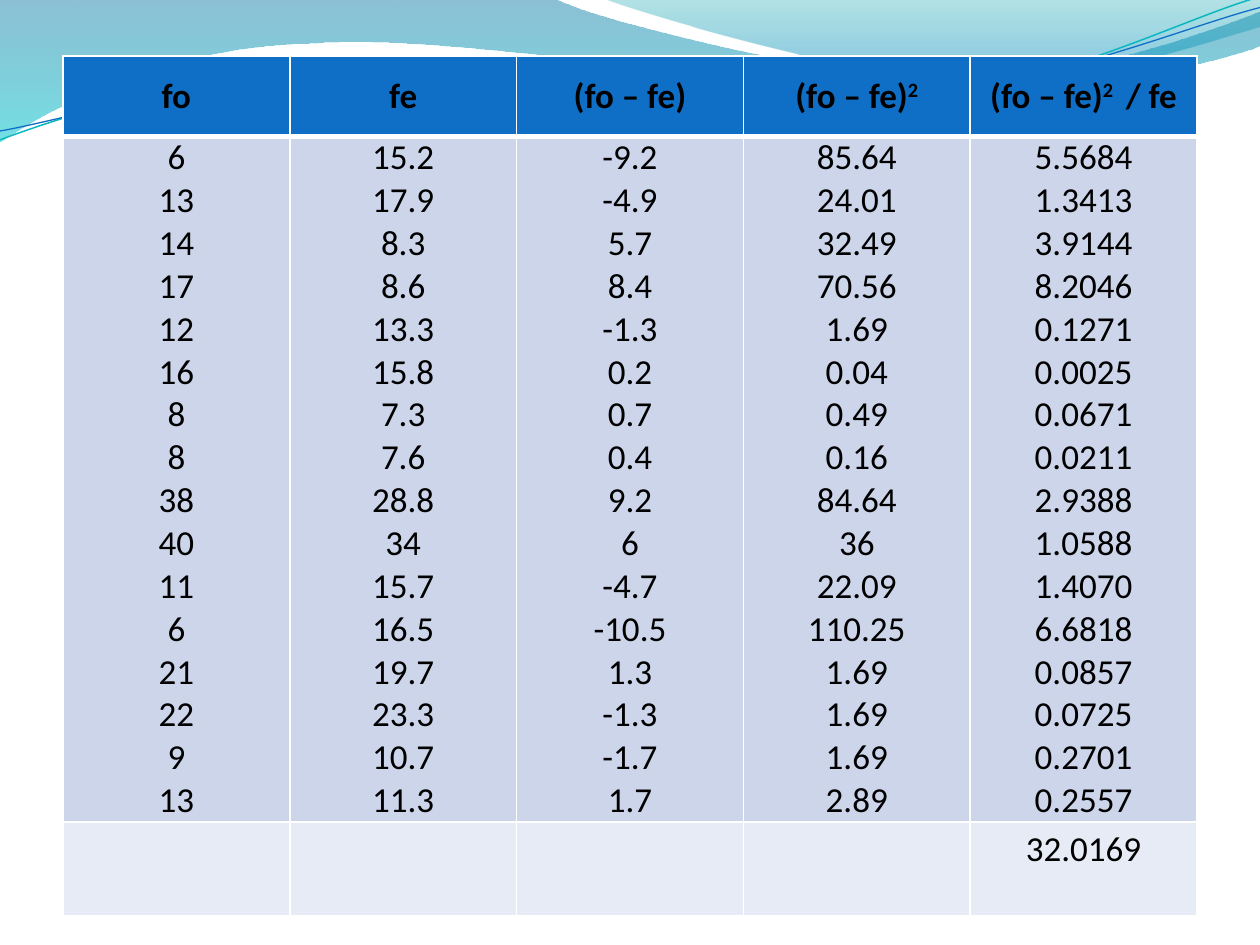
import math

from lxml import etree
from pptx import Presentation
from pptx.dml.color import RGBColor
from pptx.enum.text import MSO_ANCHOR, PP_ALIGN
from pptx.oxml.ns import qn
from pptx.util import Cm, Pt

CENTER = PP_ALIGN.CENTER
MIDDLE, TOP = MSO_ANCHOR.MIDDLE, MSO_ANCHOR.TOP
INCH = 2.54
TILT = 357.3
FONT = "Calibri"
COLORS = {
    "text": "000000", "border": "FFFFFF", "header": "0F6FC6",
    "body": "CCD5EA", "total": "E7EBF5",
    "deep_blue": "0074A1", "cyan": "00C6CF", "teal": "00A1A9", "sky": "008BBF",
    "teal_line": "0AB8BF", "blue_line": "0F6FC6",
}

LEFT_WAVE = [
    [(0, 0)], [(4.4, -0.01)],
    [(4.76, 0.17), (6.64, 0.63), (7.58, 0.63)],
    [(8.53, 0.63), (9.58, 0.26), (10, 0.09)],
    [(10.01, 0.36)],
    [(9.83, 0.44), (8.7, 0.76), (7.46, 0.75)],
    [(6.22, 0.75), (3.82, 0.28), (2.57, 0.34)],
    [(1.29, 0.36), (0.46, 0.83), (-0.01, 1.13)],
    [(0, 0)],
]
RIGHT_WAVE = [
    [(4.79, -0.01)],
    [(5.09, 0.11), (6.82, 0.62), (7.69, 0.65)],
    [(8.56, 0.69), (9.61, 0.32), (10, 0.21)],
    [(10, 0)], [(4.79, -0.01)],
]
TEAL_CURVE = [
    [(0, 1.11)],
    [(0.48, 0.93), (1.58, 0.57), (2.77, 0.52)],
    [(3.95, 0.47), (5.93, 0.89), (7.13, 0.8)],
    [(8.33, 0.71), (9.38, 0.15), (9.98, -0.02)],
]
BLUE_CURVE = [
    [(0, 1.04)],
    [(0.47, 0.96), (1.64, 0.61), (2.83, 0.56)],
    [(4.03, 0.51), (5.97, 0.84), (7.17, 0.75)],
    [(8.36, 0.67), (9.41, 0.21), (10, 0.06)],
]

DIFFERENCE = ("(fo – fe)", False)
HEADERS = [
    [("fo", False)],
    [("fe", False)],
    [DIFFERENCE],
    [DIFFERENCE, ("2", True)],
    [DIFFERENCE, ("2 ", True), (" / fe", False)],
]
OBSERVATIONS = [
    ("6", "15.2", "-9.2", "85.64", "5.5684"),
    ("13", "17.9", "-4.9", "24.01", "1.3413"),
    ("14", "8.3", "5.7", "32.49", "3.9144"),
    ("17", "8.6", "8.4", "70.56", "8.2046"),
    ("12", "13.3", "-1.3", "1.69", "0.1271"),
    ("16", "15.8", "0.2", "0.04", "0.0025"),
    ("8", "7.3", "0.7", "0.49", "0.0671"),
    ("8", "7.6", "0.4", "0.16", "0.0211"),
    ("38", "28.8", "9.2", "84.64", "2.9388"),
    ("40", "34", "6", "36", "1.0588"),
    ("11", "15.7", "-4.7", "22.09", "1.4070"),
    ("6", "16.5", "-10.5", "110.25", "6.6818"),
    ("21", "19.7", "1.3", "1.69", "0.0857"),
    ("22", "23.3", "-1.3", "1.69", "0.0725"),
    ("9", "10.7", "-1.7", "1.69", "0.2701"),
    ("13", "11.3", "1.7", "2.89", "0.2557"),
]
TOTAL = "32.0169"


def color(name):
    """Return the named palette color."""
    return RGBColor.from_string(COLORS[name])


def level(segments, center):
    """Turn segments about a center so that the tilt brings them back."""
    angle = math.radians(360 - TILT)
    cos, sin = math.cos(angle), math.sin(angle)
    cx, cy = center
    return [[(cx + (x - cx) * cos - (y - cy) * sin, cy + (x - cx) * sin + (y - cy) * cos)
             for x, y in segment] for segment in segments]


def add_outline(slide, segments, close):
    """Add a shadowless freeform of lines and cubic curves given in inches."""
    segments = [[(Cm(x * INCH), Cm(y * INCH)) for x, y in segment] for segment in segments]
    ends = [segment[-1] for segment in segments]
    builder = slide.shapes.build_freeform(*ends[0])
    builder.add_line_segments(ends[1:], close=close)
    shape = builder.convert_to_shape()
    shape.shadow.inherit = False
    lines = list(shape._element.spPr.iter(qn("a:lnTo")))
    for line, segment in zip(lines, segments[1:]):
        if len(segment) == 3:
            line.tag = qn("a:cubicBezTo")
            controls = [etree.Element(qn("a:pt"), x=str(x - shape.left), y=str(y - shape.top))
                        for x, y in segment[:2]]
            line[:0] = controls
    return shape


def add_wave(slide, segments, stops):
    """Add a wave with a translucent gradient running from top to bottom."""
    wave = add_outline(slide, segments, True)
    wave.line.fill.background()
    wave.fill.gradient()
    wave.fill.gradient_angle = 270
    for stop, (position, name, _) in zip(wave.fill.gradient_stops, stops):
        stop.position = position
        stop.color.rgb = color(name)
    tints = wave._element.spPr.iter(qn("a:srgbClr"))
    for tint, (_, _, opacity) in zip(tints, stops):
        etree.SubElement(tint, qn("a:alpha")).set("val", str(opacity * 1000))


def add_curve(slide, segments, center, name, width):
    """Add an unfilled, tilted curved line."""
    curve = add_outline(slide, level(segments, center), False)
    curve.rotation = TILT
    curve.fill.background()
    curve.line.color.rgb = color(name)
    curve.line.width = Pt(width)


def set_borders(cell, top, bottom):
    """Draw the four cell borders, with the top and bottom widths in points."""
    properties = cell._tc.get_or_add_tcPr()
    for side, width in (("L", 1), ("R", 1), ("T", top), ("B", bottom)):
        line = etree.SubElement(properties, qn(f"a:ln{side}"), w=str(Pt(width)))
        fill = etree.SubElement(line, qn("a:solidFill"))
        etree.SubElement(fill, qn("a:srgbClr"), val=COLORS["border"])


def style_cell(cell, fill, top=1, bottom=1):
    """Give a cell its borders and fill."""
    set_borders(cell, top, bottom)
    cell.fill.solid()
    cell.fill.fore_color.rgb = color(fill)


def write_cell(cell, lines, bold=False, anchor=TOP):
    """Write centred paragraphs, each a list of (text, superscript) runs."""
    cell.vertical_anchor = anchor
    for index, spans in enumerate(lines):
        frame = cell.text_frame
        para = frame.add_paragraph() if index else frame.paragraphs[0]
        para.alignment = CENTER
        for text, superscript in spans:
            span = para.add_run()
            span.text = text
            span.font.name = FONT
            span.font.size = Pt(20)
            span.font.bold = bold
            span.font.color.rgb = color("text")
            if superscript:
                span.font._element.set("baseline", "30000")


def trim_margins(cell):
    """Tighten the cell margins."""
    cell.margin_left = cell.margin_right = Cm(0.18)
    cell.margin_top = cell.margin_bottom = 0


def add_frequency_table(slide):
    """Add the table of observed and expected frequencies."""
    heights = [Cm(1.62), Cm(12.9), Cm(1.88)]
    count = len(HEADERS)
    box = slide.shapes.add_table(len(heights), count, Cm(1.27), Cm(1.13),
                                 Cm(22.86), sum(heights))
    table = box.table
    for row, height in zip(table.rows, heights):
        row.height = height
    box.height = Cm(17.04)
    for index, (header, values) in enumerate(zip(HEADERS, zip(*OBSERVATIONS))):
        head, body, total = (table.cell(row, index) for row in range(len(heights)))
        style_cell(head, "header", bottom=3)
        style_cell(body, "body", top=3)
        style_cell(total, "total")
        trim_margins(head)
        trim_margins(body)
        write_cell(head, [header], bold=True, anchor=MIDDLE)
        write_cell(body, [[(value, False)] for value in values])
    write_cell(table.cell(len(heights) - 1, count - 1), [[(TOTAL, False)]])


def main():
    """Build and save the slide."""
    deck = Presentation()
    deck.slide_width, deck.slide_height = Cm(25.4), Cm(19.05)
    page = deck.slides.add_slide(deck.slide_layouts[6])
    add_wave(page, LEFT_WAVE, [(0, "deep_blue", 45), (1, "cyan", 55)])
    add_wave(page, RIGHT_WAVE, [(0, "teal", 30), (0.8, "sky", 45)])
    add_curve(page, TEAL_CURVE, (4.99, 0.58), "teal_line", 0.85)
    add_curve(page, BLUE_CURVE, (5, 0.59), "blue_line", 0.75)
    add_frequency_table(page)
    deck.save("out.pptx")


if __name__ == "__main__":
    main()
